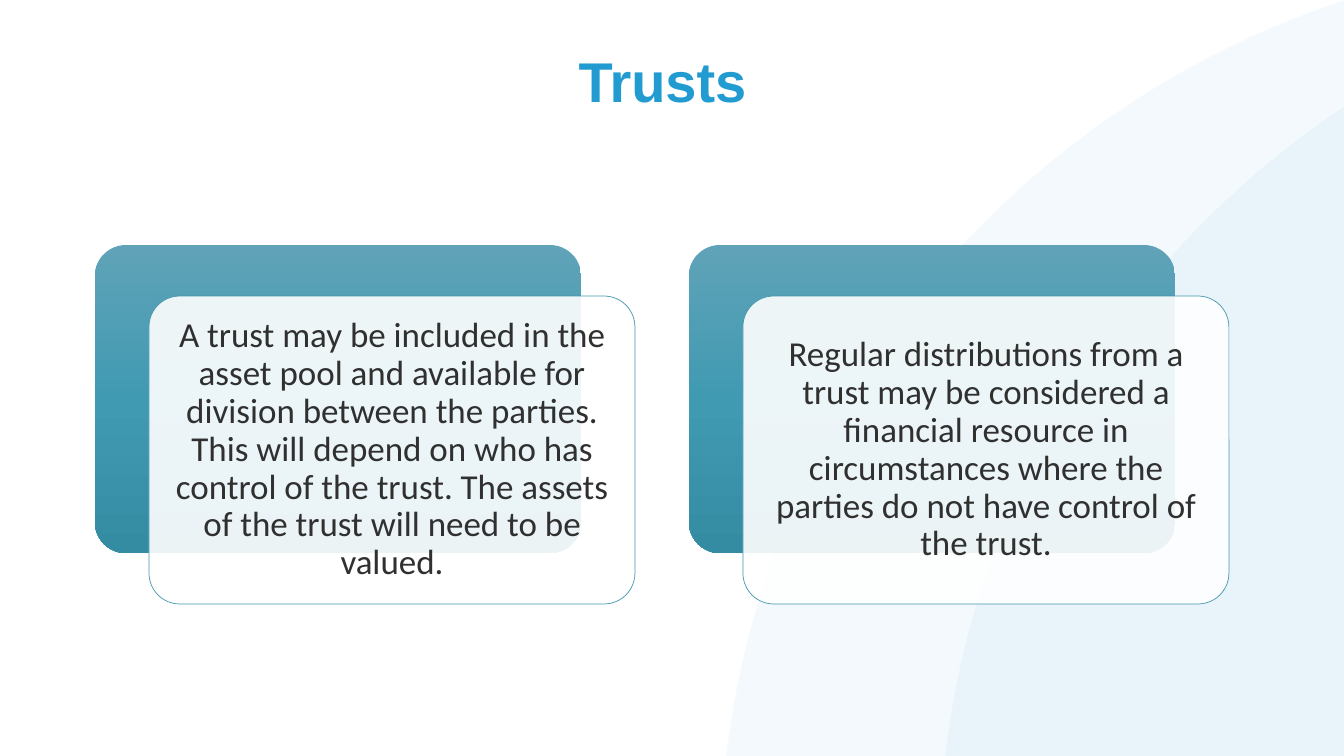
from dataclasses import dataclass
from copy import deepcopy

from lxml.etree import SubElement
from pptx import Presentation
from pptx.dml.color import RGBColor
from pptx.enum.shapes import MSO_SHAPE
from pptx.enum.text import MSO_ANCHOR, PP_ALIGN
from pptx.oxml.ns import qn
from pptx.shapes.autoshape import Shape
from pptx.slide import Slide
from pptx.util import Emu, Pt

EMU_PER_PX = 914400 / 100.8


@dataclass(frozen=True)
class Theme:
    accent: str = "229CD0"
    body: str = "303030"
    panel: str = "FFFFFF"
    outline: str = "4597AD"
    gradient: tuple[str, ...] = ("60A3B8", "409AB2", "348CA3")
    title_font: str = "Arial"
    body_font: str = "Calibri"
    title_size: int = 40
    body_size: int = 25
    arc_opacity: int = 5
    panel_opacity: int = 90


@dataclass(frozen=True)
class Box:
    left: int
    top: int
    width: int
    height: int

    def shifted(self, dx: int, dy: int) -> "Box":
        return Box(self.left + dx, self.top + dy, self.width, self.height)

    def inset(self, gap: int) -> "Box":
        return Box(self.left + gap, self.top + gap,
                   self.width - 2 * gap, self.height - 2 * gap)

    def emu(self) -> tuple[Emu, ...]:
        return tuple(px(n) for n in (self.left, self.top, self.width, self.height))


THEME = Theme()
TITLE = Box(95, 49, 1135, 98)
ARCS = [Box(left, -45, 1816, 1816) for left in (720, 939)]
FIRST_CARD = Box(95, 245, 486, 308)
CARD_PITCH = 594
PANEL_SHIFT = (54, 51)
PANEL_INSET = 9
STATEMENTS = [
    "A trust may be included in the asset pool and available for division "
    "between the parties. This will depend on who has control of the trust. "
    "The assets of the trust will need to be valued.",
    "Regular distributions from a trust may be considered a financial resource "
    "in circumstances where the parties do not have control of the trust.",
]


def px(length: int) -> Emu:
    return Emu(round(length * EMU_PER_PX))


def add_plain(slide: Slide, preset: MSO_SHAPE, box: Box) -> Shape:
    shape = slide.shapes.add_shape(preset, *box.emu())
    shape.shadow.inherit = False
    shape.line.fill.background()
    if preset == MSO_SHAPE.ROUNDED_RECTANGLE:
        shape.adjustments[0] = 0.1
    return shape


def fill_translucent(shape: Shape, color: str, opacity: int) -> None:
    shape.fill.solid()
    shape.fill.fore_color.rgb = RGBColor.from_string(color)
    tint = shape.element.spPr.find(qn("a:solidFill"))[0]
    SubElement(tint, qn("a:alpha")).set("val", str(opacity * 1000))


def fill_gradient(shape: Shape, colors: tuple[str, ...]) -> None:
    shape.fill.gradient()
    shape.fill.gradient_angle = 270
    stop_list = shape.element.spPr.find(qn("a:gradFill")).find(qn("a:gsLst"))
    while len(stop_list) < len(colors):
        stop_list.append(deepcopy(stop_list[0]))
    for index, (stop, color) in enumerate(zip(shape.fill.gradient_stops, colors)):
        stop.color.rgb = RGBColor.from_string(color)
        stop.position = index / (len(colors) - 1)


def add_text(slide: Slide, box: Box, text: str, *, font: str, size: int,
             color: str, bold: bool = False, margin: int = 10,
             anchor: MSO_ANCHOR = MSO_ANCHOR.TOP) -> None:
    frame = slide.shapes.add_textbox(*box.emu()).text_frame
    frame.word_wrap = True
    frame.vertical_anchor = anchor
    frame.margin_left = frame.margin_right = px(10)
    frame.margin_top = frame.margin_bottom = px(margin)
    paragraph = frame.paragraphs[0]
    paragraph.alignment = PP_ALIGN.CENTER
    paragraph.line_spacing = 0.9
    run = paragraph.add_run()
    run.text = text
    run.font.name = font
    run.font.size = Pt(size)
    run.font.bold = bold
    run.font.color.rgb = RGBColor.from_string(color)


def add_card(slide: Slide, box: Box, statement: str) -> None:
    backing = add_plain(slide, MSO_SHAPE.ROUNDED_RECTANGLE, box)
    fill_gradient(backing, THEME.gradient)
    panel_box = box.shifted(*PANEL_SHIFT)
    panel = add_plain(slide, MSO_SHAPE.ROUNDED_RECTANGLE, panel_box)
    fill_translucent(panel, THEME.panel, THEME.panel_opacity)
    panel.line.color.rgb = RGBColor.from_string(THEME.outline)
    panel.line.width = Pt(0.5)
    add_text(slide, panel_box.inset(PANEL_INSET), statement, font=THEME.body_font,
             size=THEME.body_size, color=THEME.body, anchor=MSO_ANCHOR.MIDDLE)


def main() -> None:
    deck = Presentation()
    deck.slide_width, deck.slide_height = px(1344), px(756)
    slide = deck.slides.add_slide(deck.slide_layouts[6])
    for arc_box in ARCS:
        arc = add_plain(slide, MSO_SHAPE.OVAL, arc_box)
        fill_translucent(arc, THEME.accent, THEME.arc_opacity)
    add_text(slide, TITLE, "Trusts", font=THEME.title_font, size=THEME.title_size,
             color=THEME.accent, bold=True, margin=5)
    for index, statement in enumerate(STATEMENTS):
        add_card(slide, FIRST_CARD.shifted(index * CARD_PITCH, 0), statement)
    deck.save("out.pptx")


if __name__ == "__main__":
    main()
